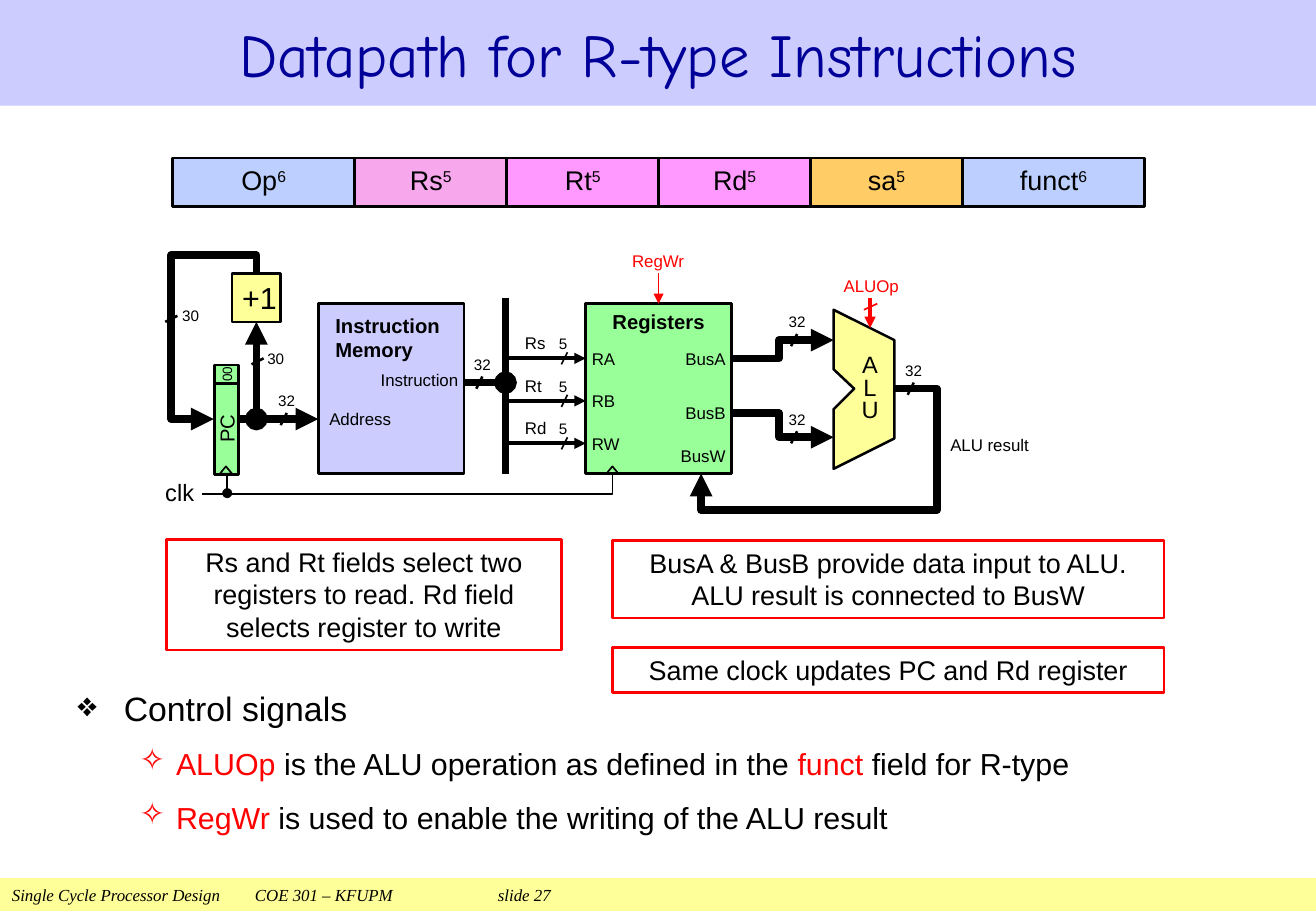
from lxml import etree
from pptx import Presentation
from pptx.dml.color import RGBColor
from pptx.enum.shapes import MSO_CONNECTOR, MSO_SHAPE as SHAPE
from pptx.enum.text import MSO_ANCHOR as ANCHOR, PP_ALIGN as ALIGN
from pptx.oxml.ns import qn
from pptx.util import Inches, Pt

BLACK, RED, YELLOW, GREEN, LAVENDER = "000000", "FF0000", "FFFF99", "99FF99", "CCCCFF"
BUS, SIGNAL, OUTLINE, THIN = 4.5, 2.25, 1.5, 1
PADDED = (0.1, 0.05, 0.1, 0.05)


def rgb(value):
    return RGBColor.from_string(value)


class SlideBuilder:
    """Holds the text style and the current slide."""

    def __init__(self, slide, font="Arial"):
        self.slide = slide
        self.shapes = slide.shapes
        self.font = font

    def style_paragraph(self, paragraph, size, color=BLACK, font=None, bold=False, italic=False):
        paragraph.font.name = font or self.font
        paragraph.font.size = Pt(size)
        paragraph.font.color.rgb = rgb(color)
        paragraph.font.bold = bold
        paragraph.font.italic = italic

    def set_text(self, shape, text, size, align=ALIGN.CENTER, anchor=ANCHOR.MIDDLE,
                 insets=(0, 0, 0, 0), spacing=None, **style):
        frame = shape.text_frame
        frame.word_wrap = True
        frame.vertical_anchor = anchor
        frame.margin_left, frame.margin_top, frame.margin_right, frame.margin_bottom = map(Inches, insets)
        for index, line in enumerate(text.split("\n")):
            paragraph = frame.add_paragraph() if index else frame.paragraphs[0]
            paragraph.add_run().text = line
            paragraph.alignment = align
            paragraph.line_spacing = spacing
            self.style_paragraph(paragraph, size, **style)

    def label(self, text, left, top, width, height, size=10, align=ALIGN.LEFT, **style):
        box = self.shapes.add_textbox(*map(Inches, (left, top, width, height)))
        self.set_text(box, text, size, align, **style)

    def box(self, left, top, width, height, fill=None, line=BLACK, weight=OUTLINE,
            kind=SHAPE.RECTANGLE, rotation=0):
        shape = self.shapes.add_shape(kind, *map(Inches, (left, top, width, height)))
        shape.rotation = rotation
        self.paint(shape, fill, line, weight)
        return shape

    def paint(self, shape, fill, line, weight):
        shape.shadow.inherit = False
        if fill:
            shape.fill.solid()
            shape.fill.fore_color.rgb = rgb(fill)
        else:
            shape.fill.background()
        if line:
            shape.line.color.rgb = rgb(line)
            shape.line.width = Pt(weight)
        else:
            shape.line.fill.background()

    def add_ends(self, shape, head, tail):
        line = shape.line._get_or_add_ln()
        for tag, kind in (("a:headEnd", head), ("a:tailEnd", tail)):
            if kind:
                etree.SubElement(line, qn(tag), type=kind)

    def line(self, start, end, weight=OUTLINE, color=BLACK, head=None, tail=None):
        connector = self.shapes.add_connector(MSO_CONNECTOR.STRAIGHT, *map(Inches, (*start, *end)))
        connector.line.color.rgb = rgb(color)
        connector.line.width = Pt(weight)
        self.add_ends(connector, head, tail)
        etree.SubElement(connector._element.spPr, qn("a:effectLst"))
        return connector

    def polyline(self, points, weight, fill=None, tail=None, close=False):
        corners = [(Inches(x), Inches(y)) for x, y in points]
        builder = self.shapes.build_freeform(*corners[0], scale=1.0)
        builder.add_line_segments(corners[1:], close=close)
        shape = builder.convert_to_shape()
        self.paint(shape, fill, BLACK, weight)
        self.add_ends(shape, None, tail)

    def bus_width(self, bits, x, y, slash_x, slash_y, dx=0.05, dy=0.1, weight=OUTLINE):
        """Bit count at (x, y) and a slash across the wire."""
        self.label(bits, x + 0.03, y, 0.2, 0.2, size=9)
        self.line((slash_x, slash_y), (slash_x - dx, slash_y + dy), weight)

    def bullets(self, frame, items):
        for index, (level, mark, indent, hanging, size, runs) in enumerate(items):
            paragraph = frame.add_paragraph() if index else frame.paragraphs[0]
            paragraph.level = level
            paragraph.line_spacing = 1.1
            paragraph.space_before = Pt(8)
            properties = paragraph._p.get_or_add_pPr()
            properties.set("marL", str(Inches(indent)))
            properties.set("indent", str(-Inches(hanging)))
            etree.SubElement(properties, qn("a:buChar"), char=mark)
            self.style_paragraph(paragraph, size)
            for text, color in runs:
                run = paragraph.add_run()
                run.text = text
                run.font.color.rgb = rgb(color)


presentation = Presentation()
presentation.slide_width, presentation.slide_height = Inches(10.83), Inches(7.5)
slide = presentation.slides.add_slide(presentation.slide_layouts[6])
draw = SlideBuilder(slide)

# Footer and title
footer = draw.box(0, 7.23, 10.83, 0.27, YELLOW, None)
draw.set_text(footer, "Single Cycle Processor Design\tCOE 301 – KFUPM\tslide 27", 10, ALIGN.LEFT,
              ANCHOR.TOP, PADDED, font="Times New Roman", italic=True)
tabs = etree.Element(qn("a:tabLst"))
for position in (2, 4):
    etree.SubElement(tabs, qn("a:tab"), pos=str(Inches(position)), algn="l")
footer.text_frame.paragraphs[0]._p.pPr.insert(0, tabs)
title = draw.box(0, 0, 10.83, 0.87, LAVENDER, None)
draw.set_text(title, "Datapath for R-type Instructions", 36, insets=PADDED, font="Comic Neue", color="000099")

# Control signals
body = slide.shapes.add_textbox(*map(Inches, (0.54, 5.58, 9.75, 1.3)))
body.text_frame.word_wrap = True
draw.bullets(body.text_frame, [
    (0, "❖", 0.38, 0.38, 20, [("Control signals", BLACK)]),
    (1, "✧", 0.81, 0.3, 18, [("ALUOp ", RED), ("is the ALU operation as defined in the ", BLACK),
                             ("funct", RED), (" field for R-type", BLACK)]),
    (1, "✧", 0.81, 0.3, 18, [("RegWr", RED), (" is used to enable the writing of the ALU result", BLACK)]),
])

# Instruction format
field_left = 1.42
for name, bits, width, fill in [("Op", "6", 1.5, "BCCFFE"), ("Rs", "5", 1.25, "F7A7EC"),
                                ("Rt", "5", 1.25, "FF99FF"), ("Rd", "5", 1.25, "FF99FF"),
                                ("sa", "5", 1.25, "FFCC66"), ("funct", "6", 1.5, "BCCFFE")]:
    field = draw.box(field_left, 1.3, width, 0.4, fill)
    draw.set_text(field, name, 16, insets=(0, 0.1, 0, 0.1), spacing=0.85)
    exponent = field.text_frame.paragraphs[0].add_run()
    exponent.text = bits
    exponent._r.get_or_add_rPr().set("baseline", "30000")
    field_left += width

# ALU with its buses
draw.polyline([(6.86, 3.86), (7.36, 3.61), (7.36, 2.8), (6.86, 2.55), (6.86, 3.04),
               (7.03, 3.2), (6.86, 3.37)], OUTLINE, YELLOW, close=True)
draw.label("A\nL\nU", 6.95, 2.8, 0.42, 0.81, 14, ALIGN.CENTER, spacing=0.8)
for bus_y, alu_y in ((3.4, 3.6), (2.95, 2.8)):
    draw.polyline([(6.01, bus_y), (6.41, bus_y), (6.41, alu_y), (6.86, alu_y)], BUS, tail="triangle")
    draw.bus_width("32", 6.46, alu_y - 0.25, 6.56, alu_y - 0.05)
draw.label("ALU result", 7.82, 3.51, 0.75, 0.3)
draw.bus_width("32", 7.42, 2.95, 7.52, 3.15)
draw.polyline([(7.36, 3.2), (7.71, 3.2), (7.71, 4.2), (5.77, 4.2), (5.77, 3.9)], BUS, tail="triangle")
draw.line((7.16, 2.45), (7.16, 2.7), SIGNAL, RED, tail="triangle")
draw.label("ALUOp", 6.77, 2.25, 0.8, 0.2, align=ALIGN.CENTER, color=RED)
draw.line((7.22, 2.5), (7.11, 2.55), THIN, RED)

# Instruction memory
draw.box(2.62, 2.5, 1.2, 1.4, LAVENDER)
draw.label("Instruction\nMemory", 2.76, 2.5, 0.95, 0.55, 12, bold=True)
draw.label("Instruction", 2.82, 3, 0.95, 0.25, align=ALIGN.RIGHT)
draw.label("Address", 2.71, 3.3, 0.75, 0.3)
draw.line((1.96, 3.45), (2.62, 3.45), BUS, tail="triangle")
draw.bus_width("32", 2.26, 3.2, 2.36, 3.4)
draw.line((3.82, 3.15), (4.16, 3.15), BUS, tail="oval")
draw.bus_width("32", 3.87, 2.9, 3.97, 3.1)
draw.line((4.16, 2.45), (4.16, 3.9), BUS)

# Program counter and increment
for text, left, top, width, size in (("PC", 1.49, 3.43, 0.75, 12), ("00", 1.79, 2.98, 0.15, 8)):
    draw.set_text(draw.box(left, top, width, 0.2, GREEN, rotation=270), text, size)
increment = draw.box(1.91, 2.25, 0.4, 0.4, YELLOW)
draw.set_text(increment, "+1", 18, insets=(0.05, 0, 0, 0))
draw.line((2.11, 3.45), (2.11, 2.65), BUS, head="oval", tail="triangle").end_connect(increment, 2)
draw.bus_width("30", 2.17, 2.85, 2.17, 2.95, 0.1, 0.05)
draw.polyline([(2.11, 2.25), (2.11, 2.1), (1.41, 2.1), (1.41, 3.45), (1.76, 3.45)], BUS, tail="triangle")
draw.bus_width("30", 1.47, 2.5, 1.46, 2.6, 0.1, 0.05)

# Register file
registers = draw.box(4.82, 2.5, 1.2, 1.4, GREEN)
draw.set_text(registers, "Registers", 12, anchor=ANCHOR.TOP, insets=(0.01, 0.05, 0.01, 0.05), bold=True)
for row, (source, port) in enumerate((("Rs", "RA"), ("Rt", "RB"), ("Rd", "RW"))):
    wire_y = 2.95 + 0.35 * row
    draw.line((4.16, wire_y), (4.82, wire_y), SIGNAL, tail="triangle")
    draw.bus_width("5", 4.57, wire_y - 0.22, 4.67, wire_y - 0.05, weight=THIN)
    draw.label(source, 4.32, wire_y - 0.2, 0.2, 0.15)
    draw.label(port, 4.87, wire_y - 0.1, 0.45, 0.2)
for bus, top in (("BusA", 2.85), ("BusB", 3.3), ("BusW", 3.65)):
    draw.label(bus, 5.52, top, 0.45, 0.2, align=ALIGN.RIGHT)
draw.line((5.42, 2.25), (5.42, 2.5), THIN, RED, tail="triangle").end_connect(registers, 0)
draw.label("RegWr", 5.07, 2.05, 0.69, 0.2, align=ALIGN.CENTER, color=RED)

# Clock
for left in (1.81, 4.99):
    draw.box(left, 3.84, 0.1, 0.06, weight=THIN, kind=SHAPE.ISOSCELES_TRIANGLE)
draw.polyline([(5.04, 3.9), (5.04, 4.07), (1.66, 4.07)], THIN)
draw.line((1.87, 3.9), (1.87, 4.06), THIN, tail="oval")
draw.label("clk", 1.36, 3.95, 0.3, 0.2, 14)

# Notes
for text, *place in [
    ("Rs and Rt fields select two registers to read. Rd field selects register to write", 1.37, 4.44, 3.25, 0.91),
    ("BusA & BusB provide data input to ALU. ALU result is connected to BusW", 5.04, 4.45, 4.54, 0.64),
    ("Same clock updates PC and Rd register", 5.04, 5.33, 4.54, 0.37),
]:
    draw.set_text(draw.box(*place, line=RED), text, 16, anchor=ANCHOR.TOP, insets=PADDED)

presentation.save("out.pptx")
